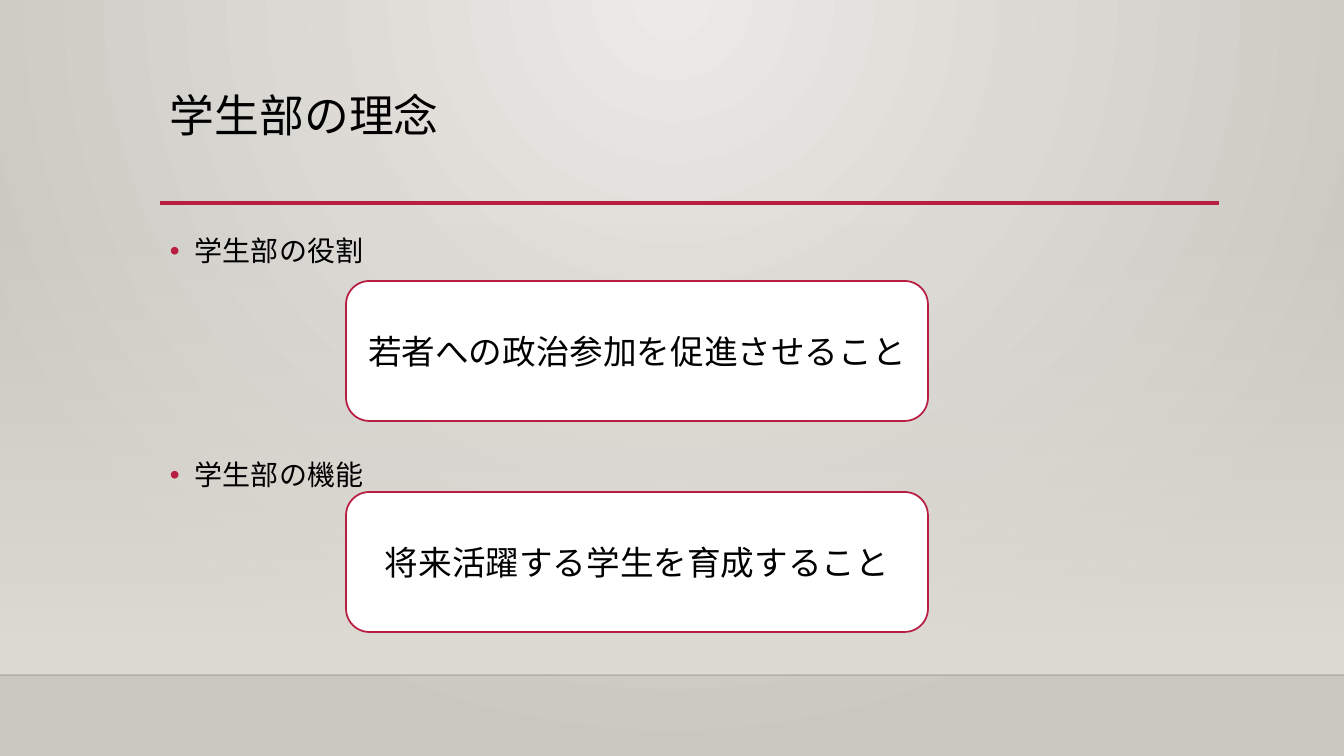
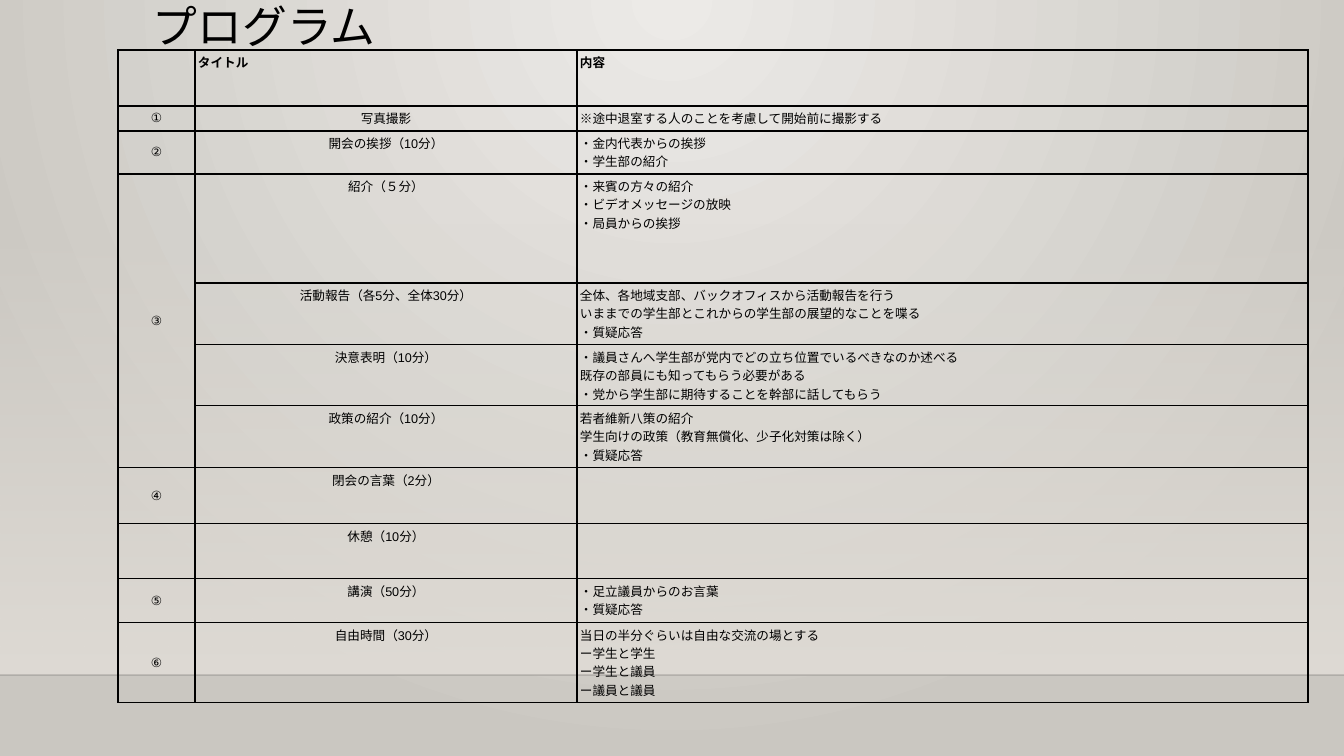
from dataclasses import dataclass

from lxml.etree import SubElement as sub
from pptx import Presentation
from pptx.dml.color import RGBColor
from pptx.enum.shapes import MSO_CONNECTOR as Con, MSO_SHAPE as Kind
from pptx.enum.text import MSO_ANCHOR as Anchor, PP_ALIGN as Align
from pptx.oxml.ns import qn
from pptx.util import Pt

# Content
GOALS = [
    ("学生部の役割", "若者への政治参加を促進させること"),
    ("学生部の機能", "将来活躍する学生を育成すること"),
]
HEAD = ("", "タイトル", ["内容"])
# number, title, lines, row height in px; None continues the number above
PLAN = [
    ("①", "写真撮影", ["※途中退室する人のことを考慮して開始前に撮影する"], 25),
    ("②", "開会の挨拶（10分）", ["・金内代表からの挨拶", "・学生部の紹介"], 43),
    ("③", "紹介（５分）",
     ["・来賓の方々の紹介", "・ビデオメッセージの放映", "・局員からの挨拶"], 109),
    (None, "活動報告（各5分、全体30分）",
     ["全体、各地域支部、バックオフィスから活動報告を行う",
      "いままでの学生部とこれからの学生部の展望的なことを喋る",
      "・質疑応答"], 62),
    (None, "決意表明（10分）",
     ["・議員さんへ学生部が党内でどの立ち位置でいるべきなのか述べる",
      "既存の部員にも知ってもらう必要がある",
      "・党から学生部に期待することを幹部に話してもらう"], 61),
    (None, "政策の紹介（10分）",
     ["若者維新八策の紹介",
      "学生向けの政策（教育無償化、少子化対策は除く）",
      "・質疑応答"], 62),
    ("④", "閉会の言葉（2分）", [], 56),
    ("", "休憩（10分）", [], 55),
    ("⑤", "講演（50分）", ["・足立議員からのお言葉", "・質疑応答"], 44),
    ("⑥", "自由時間（30分）",
     ["当日の半分ぐらいは自由な交流の場とする",
      "ー学生と学生", "ー学生と議員", "ー議員と議員"], 80),
]


@dataclass(frozen=True)
class Theme:
    ink: str = "000000"
    paper: str = "FFFFFF"
    red: str = "B71E42"
    glow: str = "ECEAE7"
    edge: str = "CAC7C1"
    wall: str = "DFDBD5"
    floor: str = "000001"
    face: str = "Cabin"
    grid: str = "Arial"
    title: int = 32
    goal: int = 24
    body: int = 20
    cell: int = 9


T = Theme()
WIDE, HIGH = 1344, 756


def px(n):
    return round(n * 12192000 / WIDE)


def box(*nums):
    return [px(n) for n in nums]


def rgb(code):
    return RGBColor.from_string(code)


# Text
def write(frame, lines, size, face=T.face, bold=False, align=Align.LEFT,
          space=None, dot=False):
    frame.word_wrap = True
    for i, line in enumerate(lines):
        para = frame.paragraphs[0] if i == 0 else frame.add_paragraph()
        if dot:
            props = para._p.get_or_add_pPr()
            props.set("marL", str(px(25)))
            props.set("indent", str(-px(25)))
            sub(sub(props, qn("a:buClr")), qn("a:srgbClr"), val=T.red)
            sub(props, qn("a:buFont"), typeface="Arial")
            sub(props, qn("a:buChar"), char="•")
        para.alignment = align
        if space:
            para.line_spacing = space
        run = para.add_run()
        run.text = line
        font = run.font
        font.name, font.size, font.bold = face, Pt(size), bold
        font.color.rgb = rgb(T.ink)


def label(slide, line, left, top, high, size, **fmt):
    shape = slide.shapes.add_textbox(*box(left, top, 1058, high))
    write(shape.text_frame, [line], size, **fmt)


# Shared backdrop
def blend(fill, *codes):
    fill.gradient()
    for stop, code in zip(fill.gradient_stops, codes):
        stop.color.rgb = rgb(code)


def fade(root, part):
    tone = next(root.iter(qn("a:srgbClr")))
    sub(tone, qn("a:alpha"), val=str(part * 1000))


def rule(slide, left, right, y, code, width):
    line = slide.shapes.add_connector(Con.STRAIGHT, *box(left, y, right, y))
    line.line.color.rgb = rgb(code)
    line.line.width = Pt(width)
    sub(line._element.spPr, qn("a:effectLst"))
    return line


def page(deck, title, left, top, high, ruled=True):
    slide = deck.slides.add_slide(deck.slide_layouts[6])
    blend(slide.background.fill, T.glow, T.edge)
    grad = next(slide.element.iter(qn("a:gradFill")))
    grad.remove(grad.find(qn("a:lin")))
    ring = sub(grad, qn("a:path"), {"path": "circle"})
    sub(ring, qn("a:fillToRect"), l="43000", t="0", r="43000", b="100000")

    wall = slide.shapes.add_shape(Kind.RECTANGLE, *box(0, 223, WIDE, 452))
    wall.shadow.inherit = False
    wall.line.fill.background()
    blend(wall.fill, T.wall, T.wall)
    wall.fill.gradient_angle = 270
    fade(wall._element.spPr, 0)

    floor = rule(slide, 0, WIDE, 675, T.floor, 1)
    fade(floor._element.spPr, 20)
    if ruled:
        rule(slide, 160, 1219, 203, T.red, 2.5)
    label(slide, title, left, top, high, T.title, space=0.9)
    return slide


# Slide 1: bullets, each with a framed goal
def goals(deck):
    slide = page(deck, "学生部の理念", 160, 89, 114)
    for i, (head, goal) in enumerate(GOALS):
        label(slide, head, 160, 222 + 224 * i, 58, T.body, space=1.2, dot=True)
    for i, (head, goal) in enumerate(GOALS):
        card = slide.shapes.add_shape(
            Kind.ROUNDED_RECTANGLE, *box(346, 281 + 211 * i, 582, 140))
        card.shadow.inherit = False
        card.fill.solid()
        card.fill.fore_color.rgb = rgb(T.paper)
        card.line.color.rgb = rgb(T.red)
        card.line.width = Pt(1.25)
        card.text_frame.vertical_anchor = Anchor.MIDDLE
        write(card.text_frame, [goal], T.goal, align=Align.CENTER)


# Slide 2: programme table
def frame(cell):
    props = cell._tc.get_or_add_tcPr()
    for side in ("lnL", "lnR", "lnT", "lnB"):
        line = sub(props, qn("a:" + side), w=str(Pt(1)))
        sub(sub(line, qn("a:solidFill")), qn("a:srgbClr"), val=T.ink)
    cell.fill.background()
    cell.margin_left = cell.margin_right = px(3)
    cell.margin_top = cell.margin_bottom = px(3)


def program(deck):
    # The table fills the page, so no title rule runs behind its text
    slide = page(deck, "プログラム", 143, 0, 50, ruled=False)
    rows = [(*HEAD, 56), *PLAN]
    cols = (77, 382, 731)
    tall = sum(row[-1] for row in rows)
    table = slide.shapes.add_table(
        len(rows), len(cols), *box(118, 50, sum(cols), tall)).table
    table.first_row = table.horz_banding = False
    for col, wide in zip(table.columns, cols):
        col.width = px(wide)

    start = 0
    for r, (mark, name, lines, high) in enumerate(rows):
        table.rows[r].height = px(high)
        side = Align.CENTER if r else Align.LEFT
        parts = (([mark] if mark else [], side), ([name], side),
                 (lines, Align.LEFT))
        for c, (part, align) in enumerate(parts):
            cell = table.cell(r, c)
            frame(cell)
            if part:
                write(cell.text_frame, part, T.cell, face=T.grid,
                      bold=r == 0, align=align)
        table.cell(r, 0).vertical_anchor = Anchor.MIDDLE
        if mark is not None:
            start = r
        elif r + 1 == len(rows) or rows[r + 1][0] is not None:
            table.cell(start, 0).merge(table.cell(r, 0))


def main():
    deck = Presentation()
    deck.slide_width, deck.slide_height = box(WIDE, HIGH)
    goals(deck)
    program(deck)
    deck.save("out.pptx")


if __name__ == "__main__":
    main()
